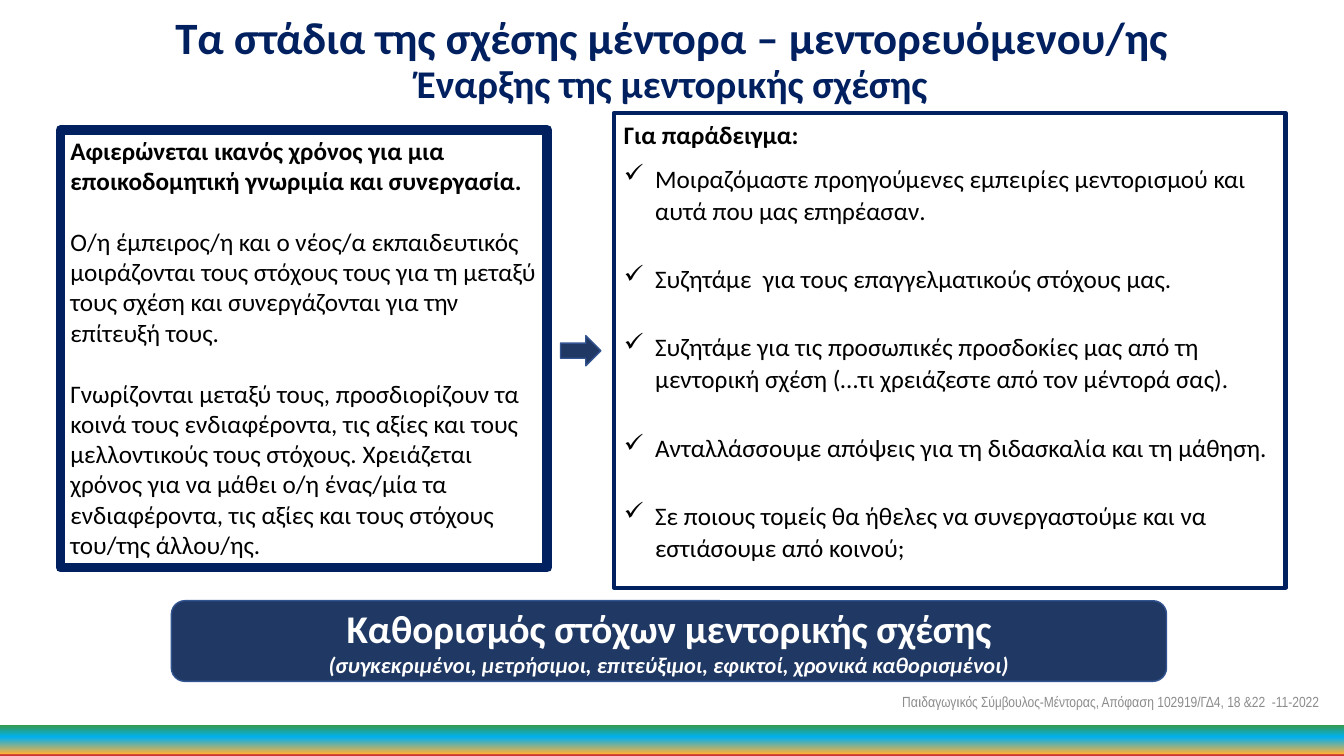
from dataclasses import dataclass, replace

from lxml import etree
from pptx import Presentation
from pptx import util as u
from pptx.dml.color import RGBColor
from pptx.enum import shapes, text
from pptx.oxml import ns

NAVY = RGBColor(0x00, 0x20, 0x60)
DEEP_BLUE = RGBColor(0x20, 0x38, 0x64)
EDGE_BLUE = RGBColor(0x32, 0x54, 0x91)
BLACK = RGBColor(0x00, 0x00, 0x00)
WHITE = RGBColor(0xFF, 0xFF, 0xFF)
GREY = RGBColor(0x8C, 0x8C, 0x8C)
BAND_STOPS = (
    (0, RGBColor(0x39, 0x9A, 0x48)),
    (39, RGBColor(0x00, 0xB0, 0xF0)),
    (93, RGBColor(0xFB, 0xB0, 0x3B)),
    (96, RGBColor(0xCC, 0x33, 0x33)),
)
SLIDE_WIDTH = 13.33
BULLET_INDENT = 0.31


@dataclass(frozen=True)
class Box:
    left: float
    top: float
    width: float
    height: float
    kind: shapes.MSO_SHAPE = shapes.MSO_SHAPE.RECTANGLE
    fill: RGBColor | None = None
    line: RGBColor | None = None
    line_width: float = 1


@dataclass(frozen=True)
class Line:
    content: str
    size: float = 18
    bold: bool = False
    italic: bool = False
    color: RGBColor = BLACK
    font: str = "Calibri"
    align: text.PP_ALIGN = text.PP_ALIGN.LEFT
    spacing: float = 1
    after: float = 0
    bullet: str = ""


TITLE = Line("Τα στάδια της σχέσης μέντορα – μεντορευόμενου/ης", 32, True,
             color=NAVY, align=text.PP_ALIGN.CENTER, spacing=0.9)
SUBTITLE = replace(TITLE, content="Έναρξης της μεντορικής σχέσης", size=28)

MEETING_TEXTS = (
    "Αφιερώνεται ικανός χρόνος για μια εποικοδομητική γνωριμία και συνεργασία.",
    "Ο/η έμπειρος/η και ο νέος/α εκπαιδευτικός μοιράζονται τους στόχους τους για τη "
    "μεταξύ τους σχέση και συνεργάζονται για την επίτευξή τους.",
    "Γνωρίζονται μεταξύ τους, προσδιορίζουν τα κοινά τους ενδιαφέροντα, τις αξίες και "
    "τους μελλοντικούς τους στόχους. Χρειάζεται χρόνος για να μάθει ο/η ένας/μία τα "
    "ενδιαφέροντα, τις αξίες και τους στόχους του/της άλλου/ης.",
)
EXAMPLE_TEXTS = (
    "Μοιραζόμαστε προηγούμενες εμπειρίες μεντορισμού και αυτά που μας επηρέασαν.",
    "Συζητάμε  για τους επαγγελματικούς στόχους μας.",
    "Συζητάμε για τις προσωπικές προσδοκίες μας από τη μεντορική σχέση "
    "(…τι χρειάζεστε από τον μέντορά σας).",
    "Ανταλλάσσουμε απόψεις για τη διδασκαλία και τη μάθηση.",
    "Σε ποιους τομείς θα ήθελες να συνεργαστούμε και να εστιάσουμε από κοινού;",
)
GOAL = Line("Καθορισμός στόχων μεντορικής σχέσης", 28, True, color=WHITE,
            align=text.PP_ALIGN.CENTER)
GOAL_DETAIL = replace(
    GOAL, size=16, italic=True,
    content="(συγκεκριμένοι, μετρήσιμοι, επιτεύξιμοι, εφικτοί, χρονικά καθορισμένοι)")
FOOTER = Line("Παιδαγωγικός Σύμβουλος-Μέντορας, Απόφαση 102919/ΓΔ4, 18 &22  -11-2022",
              10.5, color=GREY, font="Arial Narrow")


def place(shape, box: Box) -> None:
    shape.left, shape.top, shape.width, shape.height = (
        u.Inches(value) for value in (box.left, box.top, box.width, box.height))


def add_box(slide, box: Box):
    shape = slide.shapes.add_shape(
        box.kind, *(u.Inches(value) for value in (box.left, box.top, box.width, box.height)))
    shape.shadow.inherit = False
    if box.fill is None:
        shape.fill.background()
    else:
        shape.fill.solid()
        shape.fill.fore_color.rgb = box.fill
    if box.line is None:
        shape.line.fill.background()
    else:
        shape.line.color.rgb = box.line
        shape.line.width = u.Pt(box.line_width)
    return shape


def add_bullet(paragraph, mark: str) -> None:
    properties = paragraph._p.get_or_add_pPr()
    indent = u.Inches(BULLET_INDENT)
    properties.set("marL", str(indent))
    properties.set("indent", str(-indent))
    etree.SubElement(properties, ns.qn("a:buChar")).set("char", mark)


def write_text(shape, *lines: Line, anchor=text.MSO_ANCHOR.TOP, bottom: float = 0.05) -> None:
    frame = shape.text_frame
    frame.word_wrap = True
    frame.auto_size = text.MSO_AUTO_SIZE.NONE
    frame.vertical_anchor = anchor
    frame.margin_left = frame.margin_right = u.Inches(0.1)
    frame.margin_top, frame.margin_bottom = u.Inches(0.05), u.Inches(bottom)
    for index, line in enumerate(lines):
        paragraph = frame.add_paragraph() if index else frame.paragraphs[0]
        paragraph.alignment = line.align
        paragraph.line_spacing = line.spacing
        paragraph.space_before = u.Pt(0)
        paragraph.space_after = u.Pt(line.after)
        if line.bullet:
            add_bullet(paragraph, line.bullet)
        run = paragraph.add_run()
        run.text = line.content
        run.font.name, run.font.size = line.font, u.Pt(line.size)
        run.font.bold, run.font.italic = line.bold, line.italic
        run.font.color.rgb = line.color


def paint_gradient(shape, stops: tuple) -> None:
    shape.fill.gradient()
    shape.fill.gradient_angle = 270
    stop_list = shape._element.spPr.find(".//" + ns.qn("a:gsLst"))
    for old_stop in list(stop_list):
        stop_list.remove(old_stop)
    for percent, color in stops:
        stop = etree.SubElement(stop_list, ns.qn("a:gs"))
        stop.set("pos", str(percent * 1000))
        etree.SubElement(stop, ns.qn("a:srgbClr")).set("val", str(color))


def main() -> None:
    presentation = Presentation()
    presentation.slide_width = u.Inches(SLIDE_WIDTH)
    presentation.slide_height = u.Inches(7.5)
    slide = presentation.slides.add_slide(presentation.slide_layouts[5])
    middle = text.MSO_ANCHOR.MIDDLE

    title = slide.shapes.title
    place(title, Box(0, 0.4, SLIDE_WIDTH, 0.85))
    write_text(title, TITLE, SUBTITLE, anchor=middle, bottom=0.48)

    meeting = add_box(slide, Box(0.6, 1.29, 4.83, 4.34, line=NAVY, line_width=7))
    write_text(meeting, *(Line(content, bold=index == 0, after=22)
                          for index, content in enumerate(MEETING_TEXTS)))

    band = add_box(slide, Box(0, 7.19, SLIDE_WIDTH, 0.31))
    paint_gradient(band, BAND_STOPS)

    footer = slide.shapes.add_textbox(0, 0, 0, 0)
    place(footer, Box(8.85, 6.76, 4.48, 0.4))
    write_text(footer, FOOTER, anchor=middle)

    examples = add_box(slide, Box(6.09, 1.12, 6.66, 4.71, line=NAVY, line_width=3))
    write_text(examples, Line("Για παράδειγμα:", bold=True, spacing=1.06, after=8),
               *(Line(content, spacing=1.06, after=26, bullet="✓")
                 for content in EXAMPLE_TEXTS))

    goal = add_box(slide, Box(1.7, 5.96, 9.87, 0.8, shapes.MSO_SHAPE.ROUNDED_RECTANGLE,
                              DEEP_BLUE, EDGE_BLUE))
    write_text(goal, GOAL, GOAL_DETAIL, anchor=middle)

    add_box(slide, Box(5.56, 3.33, 0.4, 0.3, shapes.MSO_SHAPE.RIGHT_ARROW,
                       DEEP_BLUE, EDGE_BLUE))
    presentation.save("out.pptx")


if __name__ == "__main__":
    main()
